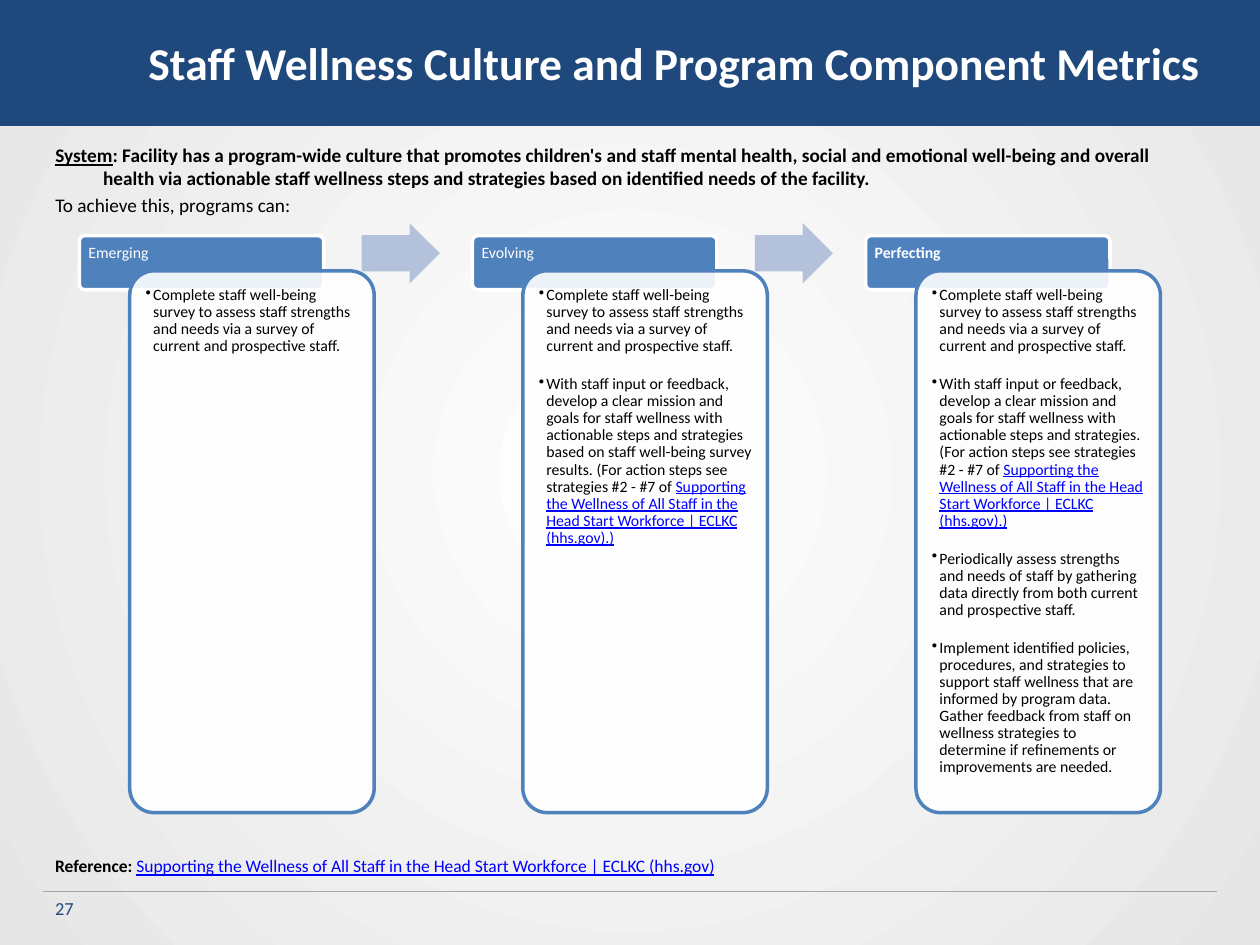
from dataclasses import dataclass

from lxml.etree import SubElement
from pptx import Presentation
from pptx.dml.color import RGBColor
from pptx.enum.shapes import MSO_CONNECTOR, MSO_SHAPE
from pptx.enum.text import MSO_ANCHOR, PP_ALIGN
from pptx.oxml.ns import qn
from pptx.util import Inches, Pt


@dataclass(frozen=True)
class Theme:
    font: str = "Calibri"
    navy: str = "1F497D"
    blue: str = "4F81BD"
    pale_blue: str = "B3C1DB"
    gray: str = "A6A6A6"
    light_gray: str = "E6E6E6"
    white: str = "FFFFFF"
    black: str = "000000"
    link: str = "0000FF"
    title_size: float = 26
    body_size: float = 11
    number_size: float = 10.5
    reference_size: float = 10
    card_size: float = 9


theme = Theme()


def add_run(paragraph, text, size, color, bold=False, underline=False):
    run = paragraph.add_run()
    run.text = text
    font = run.font
    font.name = theme.font
    font.size = Pt(size)
    font.color.rgb = RGBColor.from_string(color)
    font.bold = bold
    font.underline = underline


def add_box(kind, left, top, width, height, fill=None, line=None, inset=(0.1, 0.05)):
    """Add a preset shape, or a text box when kind is None, with top-left text."""
    place = [Inches(value) for value in (left, top, width, height)]
    if kind is None:
        shape = slide.shapes.add_textbox(*place)
    else:
        shape = slide.shapes.add_shape(kind, *place)
        shape.shadow.inherit = False
        shape.fill.solid()
        shape.fill.fore_color.rgb = RGBColor.from_string(fill)
        if line:
            shape.line.color.rgb = RGBColor.from_string(line)
            shape.line.width = Pt(2)
        else:
            shape.line.fill.background()
    frame = shape.text_frame
    frame.word_wrap = True
    frame.vertical_anchor = MSO_ANCHOR.TOP
    frame.margin_left = frame.margin_right = Inches(inset[0])
    frame.margin_top = frame.margin_bottom = Inches(inset[1])
    frame.paragraphs[0].alignment = PP_ALIGN.LEFT
    return shape


presentation = Presentation()
presentation.slide_width = Inches(10)
presentation.slide_height = Inches(7.5)
slide = presentation.slides.add_slide(presentation.slide_layouts[6])

# Background: radial gradient from the centre
background = slide.background.fill
background.gradient()
for stop, color in zip(background.gradient_stops, (theme.white, theme.light_gray)):
    stop.color.rgb = RGBColor.from_string(color)
gradient = next(slide._element.iter(qn("a:gradFill")))
gradient.remove(gradient.find(qn("a:lin")))
circle = SubElement(gradient, qn("a:path"), path="circle")
SubElement(circle, qn("a:fillToRect"), l="50000", t="50000", r="50000", b="50000")

# Footer rule and slide number
rule = slide.shapes.add_connector(
    MSO_CONNECTOR.STRAIGHT, Inches(0.34), Inches(7.07), Inches(9.66), Inches(7.07))
rule.line.color.rgb = RGBColor.from_string(theme.gray)
rule.line.width = Pt(0.25)
SubElement(rule._element.spPr, qn("a:effectLst"))
number = add_box(None, 0.34, 7.07, 2.33, 0.4)
add_run(number.text_frame.paragraphs[0], "27", theme.number_size, theme.navy)

# Title band
add_box(MSO_SHAPE.RECTANGLE, 0, -0.01, 10, 1.01, theme.navy)
title = add_box(None, 1.08, 0.23, 8.65, 0.54)
title.text_frame.word_wrap = False
add_run(title.text_frame.paragraphs[0], "Staff Wellness Culture and Program Component Metrics",
        theme.title_size, theme.white, bold=True)

# Introduction with a hanging indent
introduction = add_box(None, 0.34, 1.09, 9.32, 0.75).text_frame
system = introduction.paragraphs[0]
achieve = introduction.add_paragraph()
achieve.space_before = Pt(2.2)
for paragraph in (system, achieve):
    properties = paragraph._p.get_or_add_pPr()
    properties.set("marL", str(Inches(0.38)))
    properties.set("indent", str(Inches(-0.38)))
add_run(system, "System", theme.body_size, theme.black, bold=True, underline=True)
add_run(system, ": Facility has a program-wide culture that promotes children's and staff mental "
        "health, social and emotional well-being and overall health via actionable staff wellness "
        "steps and strategies based on identified needs of the facility.",
        theme.body_size, theme.black, bold=True)
add_run(achieve, "To achieve this, programs can:", theme.body_size, theme.black)

# Stages: each bullet is plain text followed by optional link text
guide = "Supporting the Wellness of All Staff in the Head Start Workforce | ECLKC (hhs.gov)"
survey = ("Complete staff well-being survey to assess staff strengths and needs via a survey of "
          "current and prospective staff.", "")
mission = ("With staff input or feedback, develop a clear mission and goals for staff wellness "
           "with actionable steps and strategies{}. (For action steps see strategies #2 - #7 of ")
stages = [
    ("Emerging", [survey]),
    ("Evolving", [
        survey,
        (mission.format(" based on staff well-being survey results"), guide + ".)"),
    ]),
    ("Perfecting", [
        survey,
        (mission.format(""), guide + ".)"),
        ("Periodically assess strengths and needs of staff by gathering data directly from both "
         "current and prospective staff.", ""),
        ("Implement identified policies, procedures, and strategies to support staff wellness "
         "that are informed by program data. Gather feedback from staff on wellness strategies "
         "to determine if refinements or improvements are needed.", ""),
    ]),
]
stage_pitch = 3.12

for index, (name, bullets) in enumerate(stages):
    left = 0.63 + index * stage_pitch

    # Stage header
    header = add_box(MSO_SHAPE.ROUNDED_RECTANGLE, left, 1.87, 1.94, 0.43,
                     theme.blue, theme.white, inset=(0.06, 0.06))
    header.adjustments[0] = 0.1
    label = header.text_frame.paragraphs[0]
    label.line_spacing = 0.9
    add_run(label, name, theme.card_size, theme.white, bold=index == len(stages) - 1)

    # Stage card, slightly see-through
    card = add_box(MSO_SHAPE.ROUNDED_RECTANGLE, left + 0.4, 2.15, 1.94, 4.3,
                   theme.white, theme.blue, inset=(0.07, 0.07))
    card.adjustments[0] = 0.1
    fill_color = card._element.spPr.find(qn("a:solidFill")).find(qn("a:srgbClr"))
    SubElement(fill_color, qn("a:alpha"), val="90000")
    for position, (text, link) in enumerate(bullets):
        frame = card.text_frame
        paragraph = frame.add_paragraph() if position else frame.paragraphs[0]
        paragraph.alignment = PP_ALIGN.LEFT
        paragraph.line_spacing = 0.9
        if position:
            paragraph.space_before = Pt(12)
        properties = paragraph._p.get_or_add_pPr()
        properties.set("marL", str(Inches(0.06)))
        properties.set("indent", str(Inches(-0.06)))
        SubElement(properties, qn("a:buChar"), char="•")
        add_run(paragraph, text, theme.card_size, theme.black)
        if link:
            add_run(paragraph, link, theme.card_size, theme.link, underline=True)

    # Arrow to the next stage
    if index < len(stages) - 1:
        arrow = add_box(MSO_SHAPE.RIGHT_ARROW, left + 2.24, 1.77, 0.62, 0.48, theme.pale_blue)
        arrow.adjustments[0] = 0.6
        arrow.adjustments[1] = 0.5

# Reference
reference = add_box(None, 0.34, 6.74, 7.34, 0.27).text_frame.paragraphs[0]
add_run(reference, "Reference: ", theme.reference_size, theme.black, bold=True)
add_run(reference, guide, theme.reference_size, theme.link, underline=True)

presentation.save("out.pptx")
